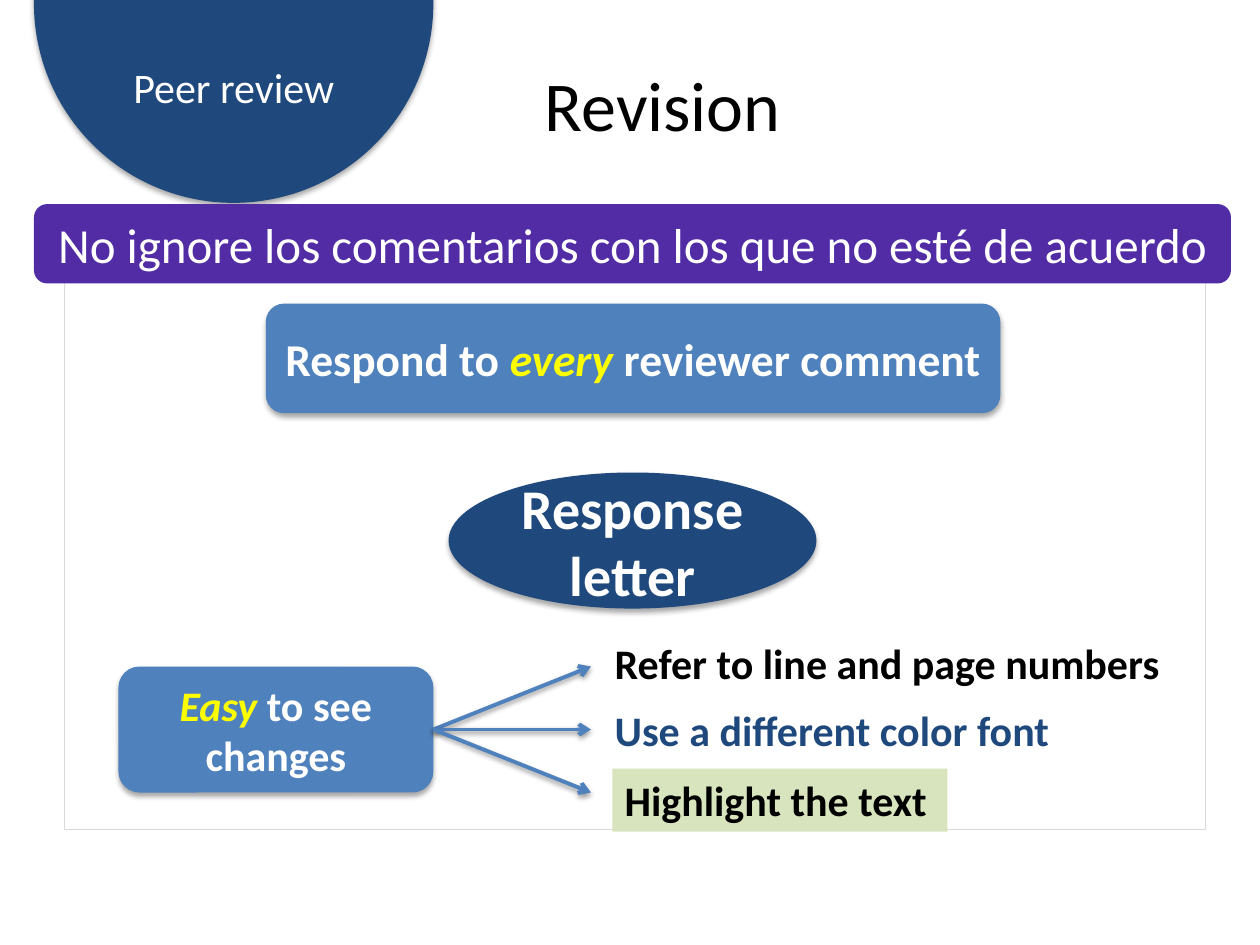
from lxml.etree import SubElement
from pptx import Presentation
from pptx.dml.color import RGBColor
from pptx.enum.shapes import MSO_CONNECTOR, MSO_SHAPE
from pptx.enum.text import MSO_ANCHOR, PP_ALIGN
from pptx.oxml.ns import qn
from pptx.util import Inches, Pt

FONT = "Calibri"
NAVY = RGBColor(0x1F, 0x49, 0x7D)
BLUE = RGBColor(0x4F, 0x81, 0xBD)
PURPLE = RGBColor(0x52, 0x2C, 0xA5)
GREEN = RGBColor(0xD7, 0xE4, 0xBD)
YELLOW = RGBColor(0xFF, 0xFF, 0x00)
GRAY = RGBColor(0xD9, 0xD9, 0xD9)
WHITE = RGBColor(0xFF, 0xFF, 0xFF)
BLACK = RGBColor(0x00, 0x00, 0x00)


def add_shadow(element, opacity, distance):
    """Put a soft downward shadow on a shape or connector."""
    properties = element.spPr
    effects = properties.find(qn("a:effectLst"))
    if effects is None:
        effects = SubElement(properties, qn("a:effectLst"))
    shadow = SubElement(effects, qn("a:outerShdw"), blurRad=str(Pt(3.1)),
                        dist=str(Pt(distance)), dir="5400000", rotWithShape="0")
    color = SubElement(shadow, qn("a:srgbClr"), val=str(BLACK))
    SubElement(color, qn("a:alpha"), val=str(opacity * 1000))


def write_text(holder, text, size=24, color=WHITE, bold=False,
               align=PP_ALIGN.CENTER, anchor=MSO_ANCHOR.MIDDLE, accent=None):
    """Write one paragraph; the accent part is set in yellow italics."""
    frame = holder.text_frame
    frame.word_wrap = True
    frame.vertical_anchor = anchor
    paragraph = frame.paragraphs[0]
    paragraph.alignment = align
    before, match, after = text.partition(accent) if accent else (text, "", "")
    for part, accented in ((before, False), (match, True), (after, False)):
        if part:
            run = paragraph.add_run()
            run.text = part
            run.font.name = FONT
            run.font.size = Pt(size)
            run.font.bold = bold
            run.font.italic = accented
            run.font.color.rgb = YELLOW if accented else color


def add_block(slide, kind, box, fill, line=None, shadow=False):
    block = slide.shapes.add_shape(kind, *map(Inches, box))
    block.shadow.inherit = False
    block.fill.solid()
    block.fill.fore_color.rgb = fill
    if line is None:
        block.line.fill.background()
    else:
        block.line.color.rgb = line
        block.line.width = Pt(0.25)
    if shadow:
        add_shadow(block.element, 35, 1.8)
    return block


def add_label(slide, box, text, **text_format):
    label = slide.shapes.add_textbox(*map(Inches, box))
    write_text(label, text, **text_format)


def add_arrow(slide, source, end_x, end_y):
    """Run an arrow from the right side of the source block."""
    arrow = slide.shapes.add_connector(
        MSO_CONNECTOR.STRAIGHT, source.left + source.width,
        source.top + source.height // 2, Inches(end_x), Inches(end_y))
    arrow.begin_connect(source, 3)
    arrow.line.color.rgb = BLUE
    arrow.line.width = Pt(2.25)
    SubElement(arrow.line._get_or_add_ln(), qn("a:tailEnd"), type="arrow")
    add_shadow(arrow.element, 38, 1.6)


def main():
    deck = Presentation()
    deck.slide_width, deck.slide_height = Inches(10), Inches(7.5)
    slide = deck.slides.add_slide(deck.slide_layouts[6])

    # Section badge in the corner
    badge = add_block(slide, MSO_SHAPE.CHORD, (0.27, -1.56, 3.17, 3.17), NAVY, shadow=True)
    badge.rotation = 292
    add_label(slide, (0.51, 0.44, 2.69, 0.51), "Peer review", anchor=MSO_ANCHOR.TOP)

    # Content panel
    add_block(slide, MSO_SHAPE.RECTANGLE, (0.51, 2, 9.06, 4.58), WHITE, line=GRAY)

    # Key messages
    letter = add_block(slide, MSO_SHAPE.OVAL, (3.56, 3.75, 2.92, 1.08), NAVY, shadow=True)
    write_text(letter, "Response letter", size=32, bold=True)
    respond = add_block(slide, MSO_SHAPE.ROUNDED_RECTANGLE, (2.11, 2.41, 5.83, 0.87),
                        BLUE, shadow=True)
    write_text(respond, "Respond to every reviewer comment", size=26, bold=True,
               accent="every ")
    changes = add_block(slide, MSO_SHAPE.ROUNDED_RECTANGLE, (0.94, 5.29, 2.5, 1),
                        BLUE, shadow=True)
    write_text(changes, "Easy to see changes", bold=True, accent="Easy")

    # Ways to make changes visible
    tip_format = dict(bold=True, align=PP_ALIGN.LEFT, anchor=MSO_ANCHOR.TOP)
    add_label(slide, (4.78, 5.01, 4.79, 0.5), "Refer to line and page numbers",
              color=BLACK, **tip_format)
    add_label(slide, (4.78, 5.54, 3.97, 0.5), "Use a different color font",
              color=NAVY, **tip_format)
    highlight = add_block(slide, MSO_SHAPE.RECTANGLE, (4.86, 6.1, 2.66, 0.5), GREEN)
    write_text(highlight, "Highlight the text", color=BLACK, **tip_format)
    for row in range(3):
        add_arrow(slide, changes, 4.69, 5.29 + 0.5 * row)

    # Title and banner
    add_label(slide, (2.05, 0.36, 6.42, 0.93), "Revision", size=40, color=BLACK)
    banner = add_block(slide, MSO_SHAPE.ROUNDED_RECTANGLE, (0.27, 1.62, 9.5, 0.63), PURPLE)
    write_text(banner, "No ignore los comentarios con los que no esté de acuerdo", size=28)

    deck.save("out.pptx")


if __name__ == "__main__":
    main()
